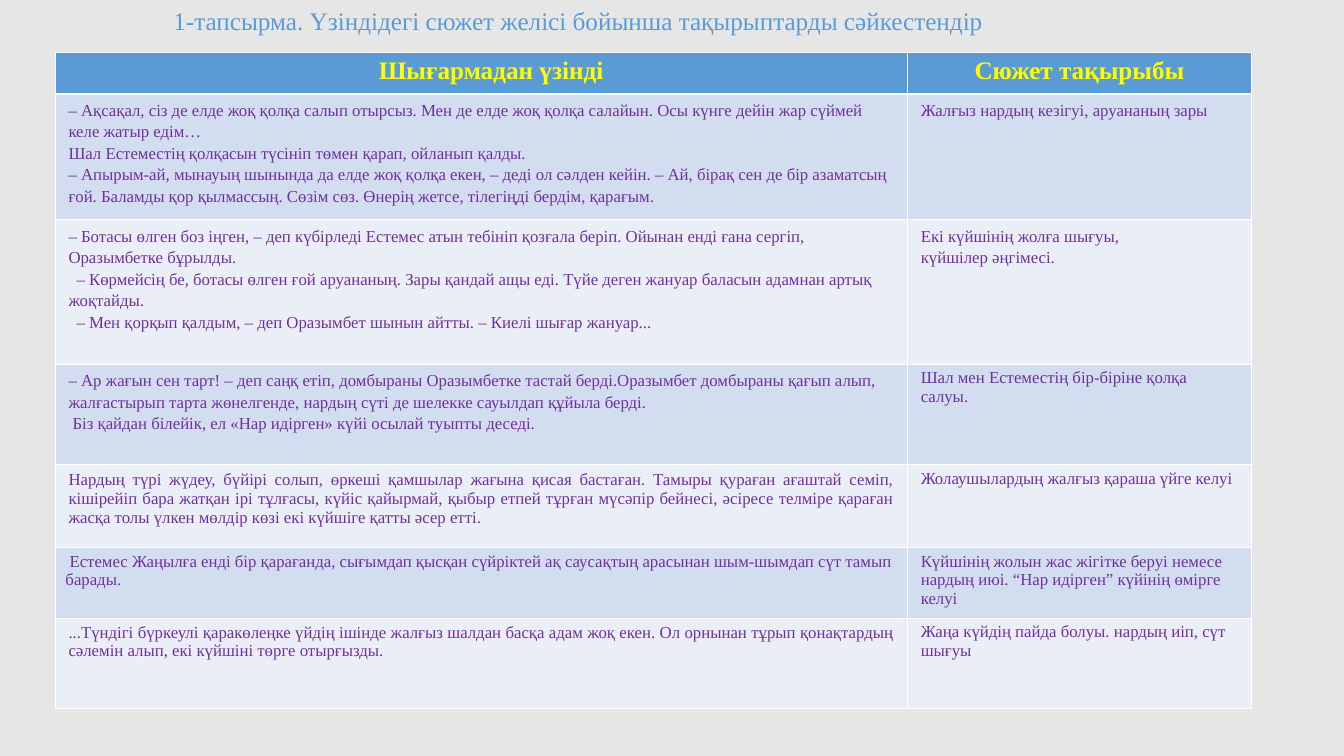
from lxml.etree import SubElement
from pptx import Presentation
from pptx.dml.color import RGBColor
from pptx.enum.text import MSO_ANCHOR, MSO_AUTO_SIZE, PP_ALIGN
from pptx.oxml.ns import qn
from pptx.util import Inches, Pt

FONT = "Times New Roman"
COLORS = {
    "background": "E7E6E6", "blue": "5B9BD5", "yellow": "FFFF00", "purple": "7030A0",
    "dark band": "D2DEEF", "light band": "EAEFF7", "border": "FFFFFF",
}
TITLE = "1-тапсырма. Үзіндідегі сюжет желісі бойынша тақырыптарды сәйкестендір"
HEADERS = ["Шығармадан үзінді", "Сюжет тақырыбы"]
COLUMN_WIDTHS = [8.46, 3.41]
ROW_HEIGHTS = [0.41, 1.15, 1.43, 1, 0.82, 0.7, 0.9]
LOOSE = {"spacing": 1.15}

# Each row holds two cells: paragraphs and their format.
ROWS = [
    [(["– Ақсақал, сіз де елде жоқ қолқа салып отырсыз. Мен де елде жоқ қолқа салайын. "
       "Осы күнге дейін жар сүймей келе жатыр едім…",
       "Шал Естеместің қолқасын түсініп төмен қарап, ойланып қалды.",
       "– Апырым-ай, мынауың шынында да елде жоқ қолқа екен, – деді ол сәлден кейін. "
       "– Ай, бірақ сен де бір азаматсың ғой. Баламды қор қылмассың. Сөзім сөз. "
       "Өнерің жетсе, тілегіңді бердім, қарағым."], LOOSE),
     (["Жалғыз нардың кезігуі, аруананың зары"], {"spacing": 1.15, "after": 10})],
    [(["– Ботасы өлген боз іңген, – деп күбірледі Естемес атын тебініп қозғала беріп. "
       "Ойынан енді ғана сергіп, Оразымбетке бұрылды.",
       "– Көрмейсің бе, ботасы өлген ғой аруананың. Зары қандай ащы еді. "
       "Түйе деген жануар баласын адамнан артық жоқтайды.",
       "– Мен қорқып қалдым, – деп Оразымбет шынын айтты. – Киелі шығар жануар..."],
      {"spacing": 1.15, "indents": [0, 0.08, 0.08]}),
     (["Екі күйшінің жолға шығуы,", "күйшілер әңгімесі."], LOOSE)],
    [(["– Ар жағын сен тарт! – деп саңқ етіп, домбыраны Оразымбетке тастай берді."
       "Оразымбет домбыраны қағып алып, жалғастырып тарта жөнелгенде, "
       "нардың сүті де шелекке сауылдап құйыла берді.",
       "Біз қайдан білейік, ел «Нар идірген» күйі осылай туыпты деседі."],
      {"spacing": 1.15, "indents": [0, 0.04]}),
     (["Шал мен Естеместің бір-біріне қолқа салуы."], {})],
    [(["Нардың түрі жүдеу, бүйірі солып, өркеші қамшылар жағына қисая бастаған. "
       "Тамыры қураған ағаштай семіп, кішірейіп бара жатқан ірі тұлғасы, күйіс қайырмай, "
       "қыбыр етпей тұрған мүсәпір бейнесі, әсіресе телміре қараған жасқа толы үлкен "
       "мөлдір көзі екі күйшіге қатты әсер етті."],
      {"align": PP_ALIGN.JUSTIFY, "spacing": 1.03, "after": 10}),
     (["Жолаушылардың жалғыз қараша үйге келуі"], {})],
    [(["Естемес Жаңылға енді бір қарағанда, сығымдап қысқан сүйріктей ақ саусақтың "
       "арасынан шым-шымдап сүт тамып барады."], {"margin": 0.1, "indents": [0.04]}),
     (["Күйшінің жолын жас жігітке беруі немесе",
       "нардың июі. “Нар идірген” күйінің өмірге келуі"], {})],
    [(["...Түндігі бүркеулі қаракөлеңке үйдің ішінде жалғыз шалдан басқа адам жоқ екен. "
       "Ол орнынан тұрып қонақтардың сәлемін алып, екі күйшіні төрге отырғызды."],
      {"align": PP_ALIGN.JUSTIFY, "spacing": 1.01, "after": 10}),
     (["Жаңа күйдің пайда болуы. нардың иіп, сүт шығуы"], {})],
]


def color(name):
    return RGBColor.from_string(COLORS[name])


def set_font(para, size, color_name, bold=False):
    para.font.name = FONT
    para.font.size = Pt(size)
    para.font.bold = bold
    para.font.color.rgb = color(color_name)


def add_borders(cell, top=0.45, bottom=0.45):
    widths = {"lnL": 0.45, "lnR": 0.45, "lnT": top, "lnB": bottom}
    for side, width in widths.items():
        line = SubElement(cell._tc.get_or_add_tcPr(), qn(f"a:{side}"), w=str(Pt(width)))
        fill = SubElement(line, qn("a:solidFill"))
        SubElement(fill, qn("a:srgbClr"), val=COLORS["border"])


def fill_cell(cell, color_name, margin):
    cell.fill.solid()
    cell.fill.fore_color.rgb = color(color_name)
    cell.margin_left = cell.margin_right = Inches(margin)


def write_header(cell, text):
    add_borders(cell, bottom=1.47)
    fill_cell(cell, "blue", 0.1)
    cell.text = text
    para = cell.text_frame.paragraphs[0]
    para.alignment = PP_ALIGN.CENTER
    set_font(para, 18, "yellow", bold=True)


def write_body(cell, texts, band, top, align=PP_ALIGN.LEFT, spacing=1.0, after=0,
               margin=0.13, indents=()):
    add_borders(cell, top=top)
    fill_cell(cell, band, margin)
    cell.text = "\n".join(texts)
    for para in cell.text_frame.paragraphs:
        para.alignment = align
        para.line_spacing = spacing
        para.space_after = Pt(after)
        set_font(para, 12, "purple")
    for para, indent in zip(cell.text_frame.paragraphs, indents):
        para._p.get_or_add_pPr().set("indent", str(Inches(indent)))


def add_matching_table(slide):
    table = slide.shapes.add_table(
        len(ROW_HEIGHTS), len(COLUMN_WIDTHS), Inches(0.55), Inches(0.52),
        Inches(sum(COLUMN_WIDTHS)), Inches(sum(ROW_HEIGHTS))).table
    for column, width in zip(table.columns, COLUMN_WIDTHS):
        column.width = Inches(width)
    for row, height in zip(table.rows, ROW_HEIGHTS):
        row.height = Inches(height)
    for column, text in enumerate(HEADERS):
        write_header(table.cell(0, column), text)
    table.cell(0, 0).margin_left = Inches(0.29)
    for row, contents in enumerate(ROWS, start=1):
        band = "dark band" if row % 2 else "light band"
        top = 1.47 if row == 1 else 0.45
        for column, (texts, layout) in enumerate(contents):
            write_body(table.cell(row, column), texts, band, top, **layout)


def write_title(slide):
    title = slide.shapes.title
    title.left, title.top = Inches(1.17), Inches(0)
    title.width, title.height = Inches(9.14), Inches(0.4)
    frame = title.text_frame
    frame.text = TITLE
    frame.word_wrap = True
    frame.auto_size = MSO_AUTO_SIZE.SHAPE_TO_FIT_TEXT
    frame.vertical_anchor = MSO_ANCHOR.TOP
    para = frame.paragraphs[0]
    para.alignment = PP_ALIGN.CENTER
    set_font(para, 18, "blue")


def main():
    deck = Presentation()
    deck.slide_width, deck.slide_height = Inches(13.34), Inches(7.5)
    slide = deck.slides.add_slide(deck.slide_layouts.get_by_name("Title Only"))
    slide.background.fill.solid()
    slide.background.fill.fore_color.rgb = color("background")
    write_title(slide)
    add_matching_table(slide)
    deck.save("out.pptx")


if __name__ == "__main__":
    main()
